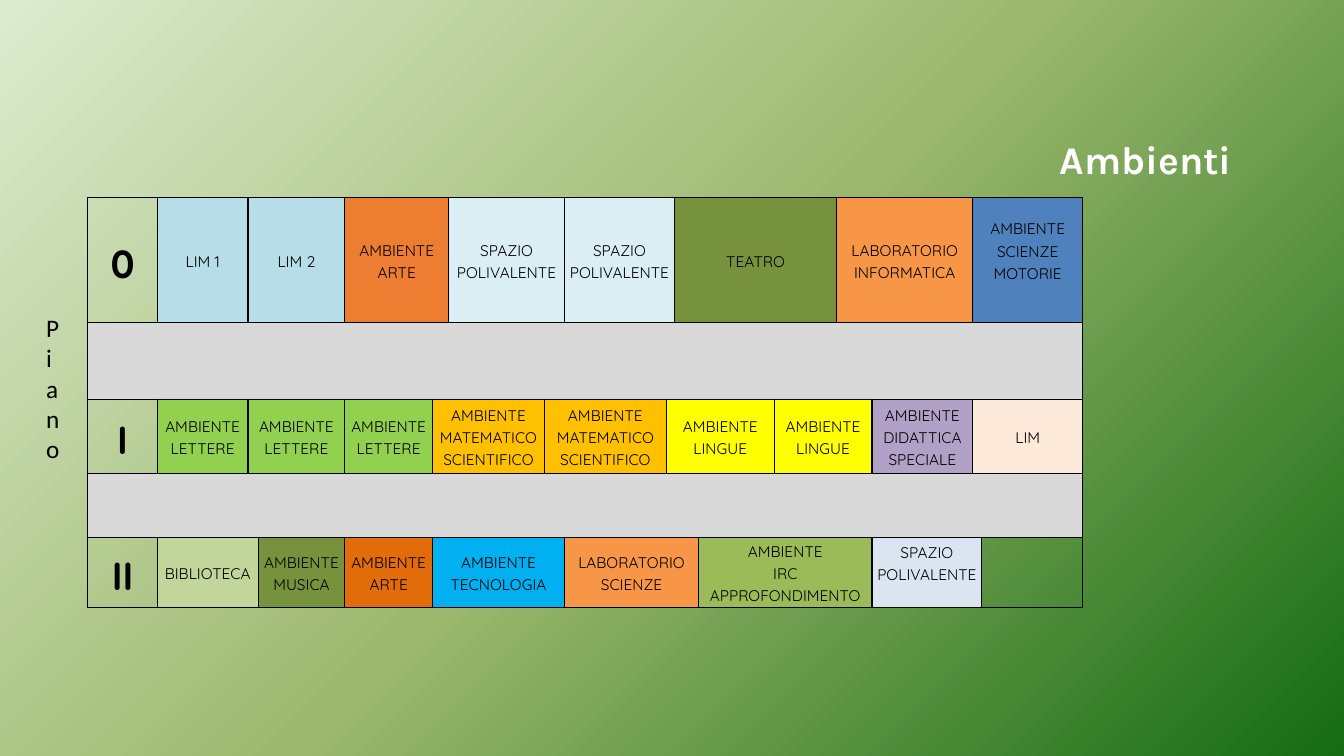
from copy import deepcopy
from lxml import etree
from pptx import Presentation
from pptx import util as u
from pptx.dml.color import RGBColor
from pptx.enum import text as t
from pptx.oxml.ns import qn

hues = {
    "black": "000000", "white": "FFFFFF", "grey": "D9D9D9",
    "sky": "B6DDE8", "ice": "DAEEF3", "mist": "DBE5F1", "blue": "4F81BD", "cyan": "00B0F0",
    "rust": "ED7D31", "burnt": "E36C0A", "orange": "F79646", "gold": "FFC000", "yellow": "FFFF00",
    "olive": "76923C", "lime": "92D050", "sage": "C2D69B", "leaf": "9BBB59",
    "lilac": "B2A1C7", "peach": "FDE9D9",
    "pale": "DDEBCF", "moss": "9CB86E", "forest": "156B13",
}

deck = Presentation()
deck.slide_width, deck.slide_height = u.Inches(13.33), u.Inches(7.5)
wide, high = deck.slide_width / 100, deck.slide_height / 100
slide = deck.slides.add_slide(deck.slide_layouts[5])


def style(run, size, face, hue, bold=False):
    for key, value in {"size": u.Pt(size), "name": face, "bold": bold}.items():
        setattr(run.font, key, value)
    run.font.color.rgb = RGBColor.from_string(hues[hue])


def area(x, y, w, h):
    return [int(n) for n in (x * wide, y * high, w * wide, h * high)]


fill = slide.background.fill
fill.gradient()
fill.gradient_angle = 315
first = fill.gradient_stops[0]._gs
first.addnext(deepcopy(first))
for stop, place, hue in zip(fill.gradient_stops, (0, 0.5, 1), ("pale", "moss", "forest")):
    stop.position = place
    stop.color.rgb = RGBColor.from_string(hues[hue])

title = slide.shapes.title
title.left, title.top, title.width, title.height = area(78.1, 17.2, 14.93, 7.6)
title.text_frame.text = "Ambienti"
title.text_frame.vertical_anchor = t.MSO_ANCHOR.TOP
title.text_frame.word_wrap = False
head = title.text_frame.paragraphs[0]
head.alignment = t.PP_ALIGN.LEFT
style(head.runs[0], 28, "Karla", "white", True)

cols = [0.69, 0.9, 0.1, 0.86, 0.87, 0.16, 0.95, 0.2, 1.01, 0.08, 0.12, 0.75, 0.62, 0.35, 1, 0.09, 1]
rows = [0.45, 1.24, 0.76, 0.74, 0.63, 0.7]
band = [("", "grey", 17)]
floors = [
    [("", None, n) for n in (1, 1, 2, 2, 2, 2, 1, 2, 2, 2)],
    [
        ("0", None, 1), ("LIM 1", "sky", 1), ("LIM 2", "sky", 2), ("AMBIENTE ARTE", "rust", 2),
        ("SPAZIO\nPOLIVALENTE", "ice", 2), ("SPAZIO\nPOLIVALENTE", "ice", 2),
        ("TEATRO", "olive", 3), ("LABORATORIO INFORMATICA", "orange", 2),
        ("AMBIENTE\nSCIENZE MOTORIE", "blue", 2),
    ],
    band,
    [
        ("I", None, 1), ("AMBIENTE LETTERE", "lime", 1), ("AMBIENTE LETTERE", "lime", 2),
        ("AMBIENTE\nLETTERE", "lime", 1), ("AMBIENTE\nMATEMATICO\nSCIENTIFICO", "gold", 2),
        ("AMBIENTE MATEMATICO\nSCIENTIFICO", "gold", 2), ("AMBIENTE LINGUE", "yellow", 3),
        ("AMBIENTE\nLINGUE", "yellow", 2), ("AMBIENTE\nDIDATTICA SPECIALE", "lilac", 1),
        ("LIM", "peach", 2),
    ],
    band,
    [
        ("II", None, 1), ("BIBLIOTECA", "sage", 2), ("AMBIENTE\nMUSICA", "olive", 1),
        ("AMBIENTE\nARTE", "burnt", 1), ("AMBIENTE\nTECNOLOGIA", "cyan", 3),
        ("LABORATORIO SCIENZE", "orange", 3), ("AMBIENTE\vIRC\nAPPROFONDIMENTO", "leaf", 3),
        ("SPAZIO\nPOLIVALENTE", "mist", 2), ("", None, 1),
    ],
]
raised = {(1, 15), (5, 14)}

frame = slide.shapes.add_table(len(rows), len(cols), *area(6.53, 20.13, 73.14, 60.27))
grid = frame.table
grid.first_row = grid.horz_banding = False
grid._tbl.tblPr[0].text = "{2D5ABB26-0587-4C30-8999-92F81FD0307C}"
for col, size in zip(grid.columns, cols):
    col.width = u.Inches(size)
for row, size in zip(grid.rows, rows):
    row.height = u.Inches(size)

for r, floor in enumerate(floors):
    c = 0
    for words, hue, span in floor:
        cell = grid.cell(r, c)
        if span > 1:
            cell.merge(grid.cell(r, c + span - 1))
        for k in range(c, c + span):
            part = grid.cell(r, k)
            if hue:
                part.fill.solid()
                part.fill.fore_color.rgb = RGBColor.from_string(hues[hue])
            else:
                part.fill.background()
            props = part._tc.get_or_add_tcPr()
            for n, side in enumerate("LRTB"):
                line = etree.Element(qn("a:ln" + side), w=str(u.Pt(1)))
                if r or side == "B":
                    ink = etree.SubElement(line, qn("a:solidFill"))
                    etree.SubElement(ink, qn("a:srgbClr"), val=hues["black"])
                else:
                    etree.SubElement(line, qn("a:noFill"))
                props.insert(n, line)
        if words:
            form = {
                "margin_left": u.Inches(0.05), "margin_right": u.Inches(0.05), "margin_top": 0,
                "margin_bottom": u.Inches(0.2 if (r, c) in raised else 0),
                "vertical_anchor": t.MSO_ANCHOR.MIDDLE,
            }
            for key, value in form.items():
                setattr(cell, key, value)
            cell.text_frame.text = words
            for para in cell.text_frame.paragraphs:
                para.alignment, para.line_spacing = t.PP_ALIGN.CENTER, 1.15
                for run in para.runs:
                    style(run, 11 if c else 28, "Quicksand", "black", c == 0)
        c += span

label = slide.shapes.add_textbox(*area(2.7, 40.67, 1.88, 21.6)).text_frame
label.word_wrap = True
label.text = "Piano"
style(label.paragraphs[0].runs[0], 18, "Calibri", "black")

deck.save("out.pptx")
